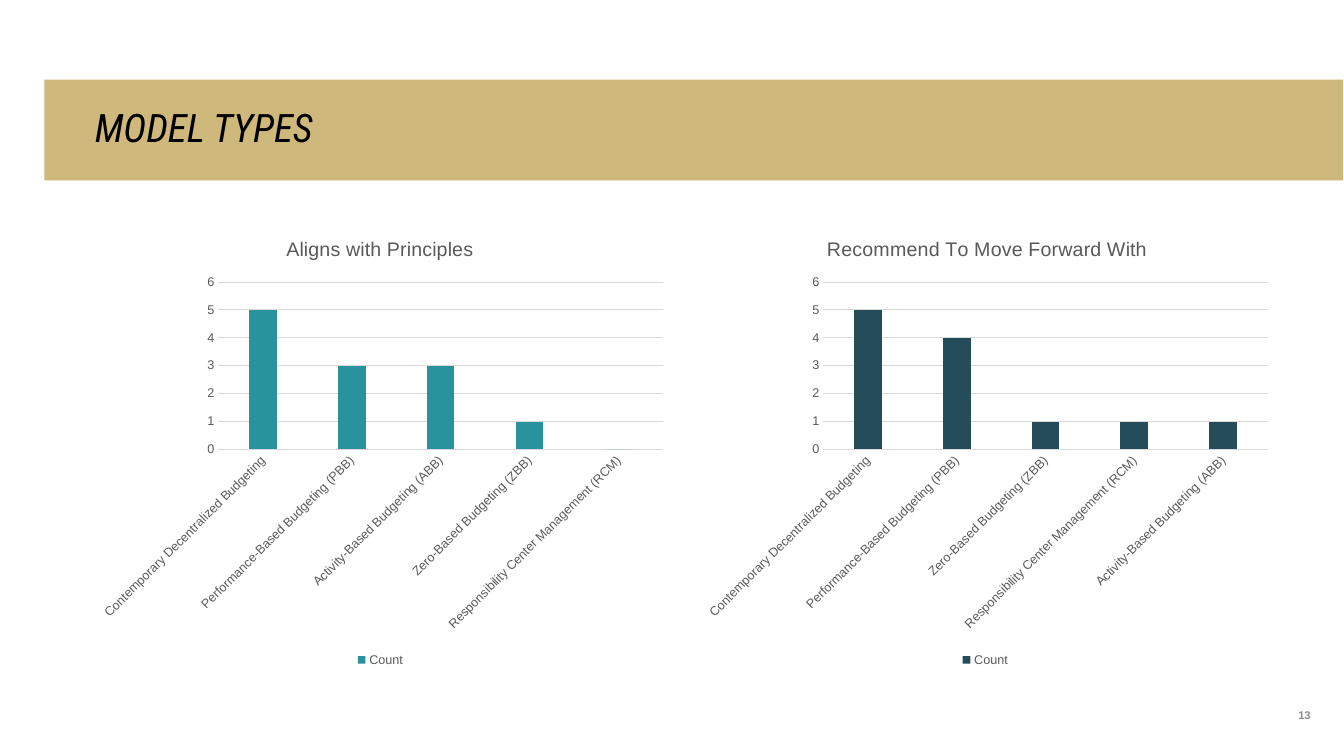
import pptx
import pptx.chart.data
import pptx.dml.color
import pptx.enum.chart
import pptx.enum.shapes
import pptx.enum.text
import pptx.oxml
import pptx.oxml.ns
import pptx.util

Inches = pptx.util.Inches
Pt = pptx.util.Pt
RGBColor = pptx.dml.color.RGBColor

GOLD = RGBColor(0xCF, 0xB8, 0x7C)
BLACK = RGBColor(0, 0, 0)
GRAY = RGBColor(0x59, 0x59, 0x59)
PALE = RGBColor(0xD9, 0xD9, 0xD9)
MUTED = RGBColor(0x8C, 0x8C, 0x8C)
TEAL = RGBColor(0x28, 0x93, 0x9D)
NAVY = RGBColor(0x24, 0x4C, 0x59)


def style(font, color, **values):
    font.color.rgb = color
    for key, value in values.items():
        setattr(font, key, value)


def place(parent, index, **values):
    for old in parent.xpath("c:layout"):
        parent.remove(old)
    items = "".join(f'<c:{key} val="{value}"/>' for key, value in values.items())
    parent.insert(index, pptx.oxml.parse_xml(
        f'<c:layout {pptx.oxml.ns.nsdecls("c")}><c:manualLayout>'
        f'{items}</c:manualLayout></c:layout>'))


deck = pptx.Presentation()
deck.slide_width = Inches(13.33)
deck.slide_height = Inches(7.5)
slide = deck.slides.add_slide(deck.slide_layouts[6])

banner = slide.shapes.add_shape(
    pptx.enum.shapes.MSO_SHAPE.RECTANGLE,
    Inches(0.44), Inches(0.79), Inches(12.88), Inches(1))
banner.shadow.inherit = False
banner.fill.solid()
banner.fill.fore_color.rgb = GOLD
banner.line.fill.background()
number = slide.shapes.add_textbox(
    Inches(12.15), Inches(6.66), Inches(0.85), Inches(0.5))

align = pptx.enum.text.PP_ALIGN
anchor = pptx.enum.text.MSO_ANCHOR
labels = [
    (banner, "MODEL TYPES", align.LEFT, anchor.MIDDLE, (0.5, 0.05, 1, 0.05), 0.9,
     BLACK, {"name": "Roboto Condensed", "size": Pt(28), "italic": True}),
    (number, "13", align.RIGHT, anchor.BOTTOM, (0, 0, 0, 0), 1,
     MUTED, {"name": "Arial", "size": Pt(8), "bold": True}),
]
for shape, text, side, level, inset, space, color, look in labels:
    frame = shape.text_frame
    frame.word_wrap = True
    frame.vertical_anchor = level
    for edge, value in zip(("left", "top", "right", "bottom"), inset):
        setattr(frame, f"margin_{edge}", Inches(value))
    line = frame.paragraphs[0]
    line.text = text
    line.alignment = side
    line.line_spacing = space
    style(line.runs[0].font, color, **look)

CDB = "Contemporary Decentralized Budgeting"
PBB = "Performance-Based Budgeting (PBB)"
ABB = "Activity-Based Budgeting (ABB)"
ZBB = "Zero-Based Budgeting (ZBB)"
RCM = "Responsibility Center Management (RCM)"
small = {"name": "Arial", "size": Pt(9)}

charts = [
    ("Recommend To Move Forward With", 6.89, 0.22, NAVY,
     {CDB: 5, PBB: 4, ZBB: 1, RCM: 1, ABB: 1}),
    ("Aligns with Principles", 0.89, 0.33, TEAL,
     {CDB: 5, PBB: 3, ABB: 3, ZBB: 1, RCM: 0}),
]
for title, left, start, color, counts in charts:
    data = pptx.chart.data.CategoryChartData()
    data.categories = list(counts)
    data.add_series("Count ", list(counts.values()))
    chart = slide.shapes.add_chart(
        pptx.enum.chart.XL_CHART_TYPE.COLUMN_CLUSTERED,
        Inches(left), Inches(2.17), Inches(5.8), Inches(4.49), data).chart
    style(chart.font, BLACK, name="Arial", size=Pt(10))

    chart.has_title = True
    head = chart.chart_title.text_frame
    head.text = title
    style(head.paragraphs[0].runs[0].font, GRAY,
          name="Arial", size=Pt(14), bold=False)
    place(chart.element.xpath("c:chart/c:title")[0], 1,
          xMode="edge", yMode="edge", x=start, y=0.03)
    place(chart.element.xpath("c:chart/c:plotArea")[0], 0,
          layoutTarget="inner", xMode="edge", yMode="edge",
          x=0.22, y=0.14, w=0.76, h=0.37)

    chart.has_legend = True
    chart.legend.position = pptx.enum.chart.XL_LEGEND_POSITION.BOTTOM
    chart.legend.include_in_layout = False
    style(chart.legend.font, GRAY, **small)

    plot = chart.plots[0]
    plot.vary_by_categories = False
    plot.gap_width = 219
    plot.overlap = -27
    bars = plot.series[0].format.fill
    bars.solid()
    bars.fore_color.rgb = color

    base, scale = chart.category_axis, chart.value_axis
    for axis in (base, scale):
        axis.major_tick_mark = pptx.enum.chart.XL_TICK_MARK.NONE
        axis.minor_tick_mark = pptx.enum.chart.XL_TICK_MARK.NONE
        style(axis.tick_labels.font, GRAY, **small)
    chart.element.xpath(".//c:catAx/c:txPr/a:bodyPr")[0].set("rot", "-2700000")
    scale.minimum_scale = 0
    scale.maximum_scale = 6
    scale.major_unit = 1
    scale.format.line.fill.background()
    for rule in (base.format.line, scale.major_gridlines.format.line):
        rule.color.rgb = PALE
        rule.width = Pt(0.75)

deck.save("out.pptx")
